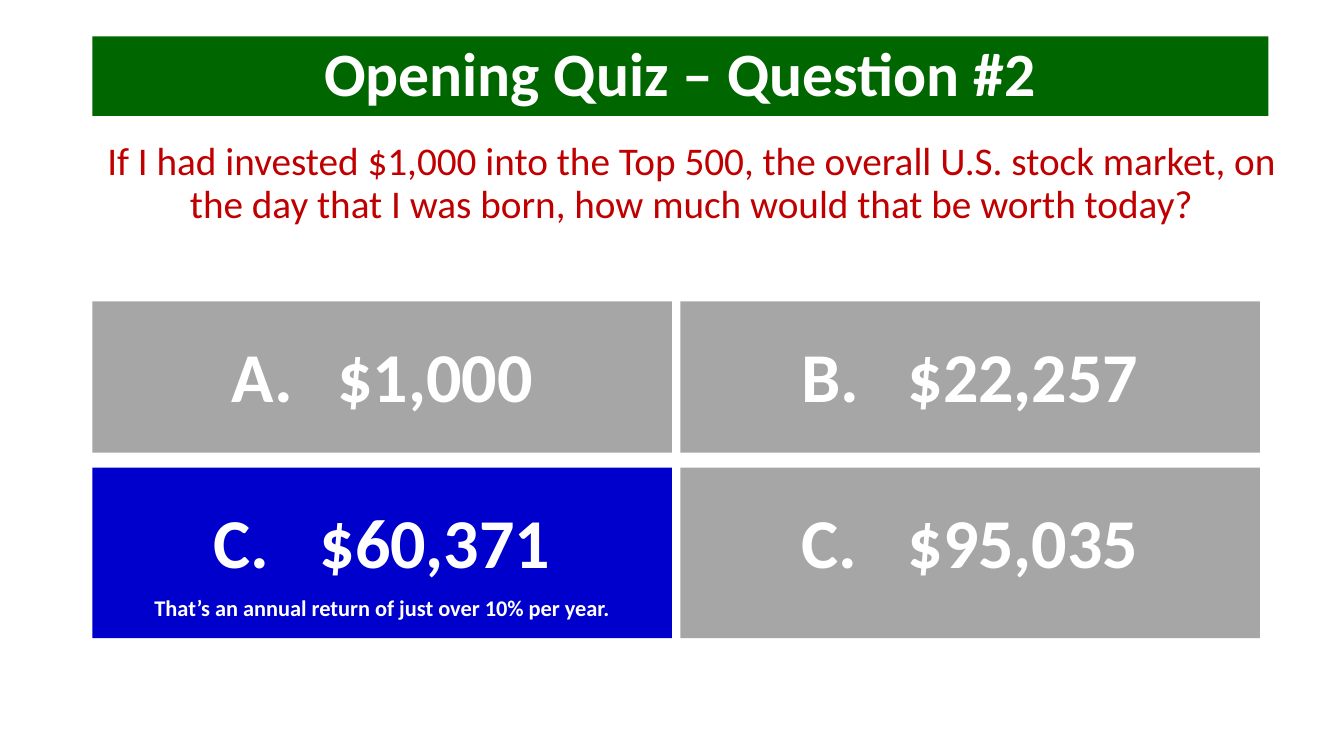
import pptx
import pptx.util
import pptx.dml.color
import pptx.enum.shapes
import pptx.enum.text
import pptx.oxml.ns
import lxml.etree

HUES = {"green": "006600", "red": "C00000", "gray": "A6A6A6",
        "blue": "0000CC", "white": "FFFFFF"}
ALIGN = pptx.enum.text.PP_ALIGN
ANCHOR = pptx.enum.text.MSO_ANCHOR
COLS, ROWS = 160, 150


class Quiz:
    face = "Calibri"
    para = {"alignment": ALIGN.CENTER, "line_spacing": 0.9}

    def __init__(self):
        self.deck = pptx.Presentation()
        self.deck.slide_width = pptx.util.Inches(13.33)
        self.deck.slide_height = pptx.util.Inches(7.5)
        self.slide = self.deck.slides.add_slide(self.deck.slide_layouts[5])

    def area(self, left, top, width, height):
        col = self.deck.slide_width / COLS
        row = self.deck.slide_height / ROWS
        return [round(v) for v in (left * col, top * row, width * col, height * row)]

    def apply(self, item, values):
        for name, value in values.items():
            setattr(item, name, value)

    def paint(self, shape, hue):
        shape.fill.solid()
        shape.fill.fore_color.rgb = pptx.dml.color.RGBColor.from_string(HUES[hue])

    def frame(self, shape, anchor, inset=0.05):
        self.apply(shape.text_frame, {
            "word_wrap": True, "auto_size": pptx.enum.text.MSO_AUTO_SIZE.NONE,
            "vertical_anchor": anchor, "margin_top": pptx.util.Inches(inset)})

    def label(self, line, text, size, hue="white", bold=True, start=None):
        self.apply(line, self.para)
        if start:
            self.number(line, start)
        line.text = text
        self.apply(line.font, {"name": self.face, "bold": bold,
                               "size": pptx.util.Pt(size)})
        line.font.color.rgb = pptx.dml.color.RGBColor.from_string(HUES[hue])

    def number(self, line, start):
        props = line._p.get_or_add_pPr()
        indent = pptx.util.Inches(1.05)
        props.set("marL", str(indent))
        props.set("indent", str(-indent))
        mark = lxml.etree.SubElement(props, pptx.oxml.ns.qn("a:buAutoNum"))
        mark.set("type", "alphaUcPeriod")
        mark.set("startAt", str(start))

    def title(self, text, *cells):
        shape = self.slide.shapes.title
        box = dict(zip(("left", "top", "width", "height"), self.area(*cells)))
        self.apply(shape, box)
        self.paint(shape, "green")
        self.frame(shape, ANCHOR.MIDDLE)
        self.label(shape.text_frame.paragraphs[0], text, 44)

    def ask(self, text, *cells):
        shape = self.slide.shapes.add_textbox(*self.area(*cells))
        self.frame(shape, ANCHOR.TOP)
        self.label(shape.text_frame.paragraphs[0], text, 28, "red", False)

    def answer(self, text, start, hue, note, *cells):
        kind = pptx.enum.shapes.MSO_SHAPE.RECTANGLE
        shape = self.slide.shapes.add_shape(kind, *self.area(*cells))
        shape.shadow.inherit = False
        shape.line.fill.background()
        self.paint(shape, hue)
        self.frame(shape, ANCHOR.TOP, 0.4)
        self.label(shape.text_frame.paragraphs[0], text, 50, start=start)
        if note:
            line = shape.text_frame.add_paragraph()
            line.space_before = pptx.util.Pt(10)
            self.label(line, note, 16)


def main():
    quiz = Quiz()
    quiz.title("Opening Quiz – Question #2", 11, 7.2, 140, 15.8)
    quiz.ask("If I had invested $1,000 into the Top 500, the overall U.S. stock "
             "market, on the day that I was born, how much would that be worth "
             "today?", 11, 27.2, 142.6, 108)
    note = "That’s an annual return of just over 10% per year."
    answers = [("$1,000", 1, "gray", ""), ("$22,257", 2, "gray", ""),
               ("$60,371", 3, "blue", note), ("$95,035", 3, "gray", "")]
    bands = [(59.8, 30), (92.8, 33.8)]
    for place, item in enumerate(answers):
        row, col = divmod(place, 2)
        top, height = bands[row]
        quiz.answer(*item, 11 + 70 * col, top, 69, height)
    quiz.deck.save("out.pptx")


if __name__ == "__main__":
    main()
